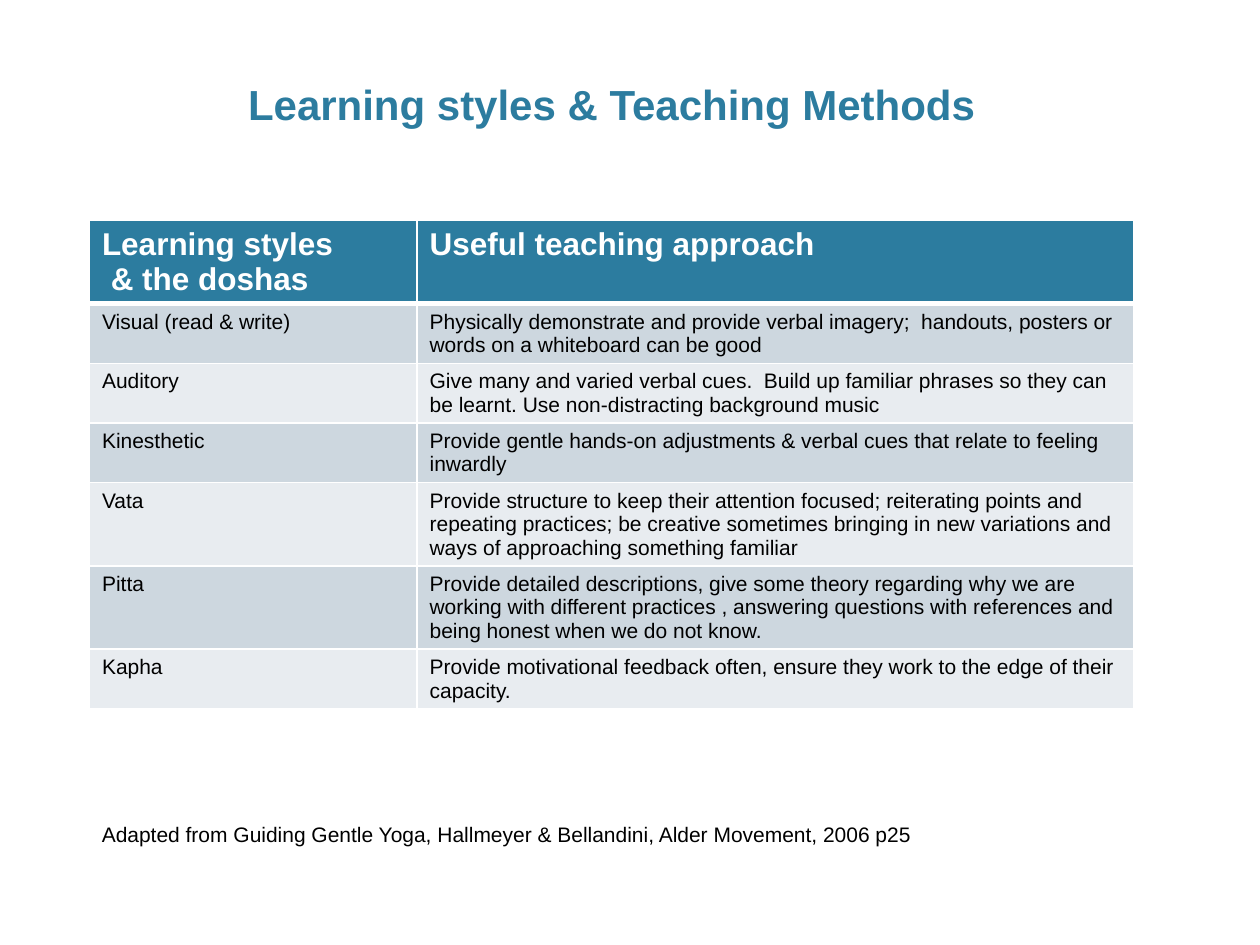
from lxml import etree
from pptx import Presentation
from pptx.dml.color import RGBColor
from pptx.enum import text
from pptx.oxml.ns import qn
from pptx.util import Inches, Pt

TEAL, WHITE, BLACK = "2C7C9F", "FFFFFF", "000000"
BANDS = ["CDD7DF", "E8ECF0"]


def write(frame, content, size=12, color=BLACK, bold=False, align=None):
    """Fill a text frame, one paragraph per line of content."""
    frame.word_wrap = True
    frame.text = content
    for paragraph in frame.paragraphs:
        paragraph.alignment = align
        font = paragraph.runs[0].font
        font.name, font.size, font.bold = "Arial", Pt(size), bold
        font.color.rgb = RGBColor.from_string(color)


def paint(cell, fill, bottom=1):
    """Give a cell white borders and a solid fill."""
    props = cell._tc.get_or_add_tcPr()
    for side, width in [("L", 1), ("R", 1), ("T", 1), ("B", bottom)]:
        line = etree.SubElement(props, qn(f"a:ln{side}"), w=str(Pt(width)))
        solid = etree.SubElement(line, qn("a:solidFill"))
        etree.SubElement(solid, qn("a:srgbClr"), val=WHITE)
    cell.fill.solid()
    cell.fill.fore_color.rgb = RGBColor.from_string(fill)


prs = Presentation()
prs.slide_width, prs.slide_height = Inches(10), Inches(7.5)
slide = prs.slides.add_slide(prs.slide_layouts[5])
left, width = Inches(0.71), Inches(8.29)

# Title
title = slide.shapes.title
title.left, title.top, title.width, title.height = left, Inches(0.25), width, Inches(0.82)
title.text_frame.vertical_anchor = text.MSO_ANCHOR.BOTTOM
write(title.text_frame, "Learning styles & Teaching Methods", size=24, color=TEAL,
      bold=True, align=text.PP_ALIGN.CENTER)

# Table of styles and approaches
approaches = [
    ("Learning styles\n & the doshas", "Useful teaching approach"),
    ("Visual (read & write)",
     "Physically demonstrate and provide verbal imagery;  handouts, posters or "
     "words on a whiteboard can be good"),
    ("Auditory",
     "Give many and varied verbal cues.  Build up familiar phrases so they can "
     "be learnt. Use non-distracting background music"),
    ("Kinesthetic",
     "Provide gentle hands-on adjustments & verbal cues that relate to feeling inwardly"),
    ("Vata",
     "Provide structure to keep their attention focused; reiterating points and "
     "repeating practices; be creative sometimes bringing in new variations and "
     "ways of approaching something familiar"),
    ("Pitta",
     "Provide detailed descriptions, give some theory regarding why we are "
     "working with different practices , answering questions with references and "
     "being honest when we do not know."),
    ("Kapha",
     "Provide motivational feedback often, ensure they work to the edge of their capacity."),
]
row_height = Inches(0.41)
table = slide.shapes.add_table(len(approaches), 2, left, Inches(1.75), width,
                               row_height * len(approaches)).table
table.columns[0].width = Inches(2.6)
table.columns[1].width = Inches(5.69)
for r, row in enumerate(approaches):
    for c, content in enumerate(row):
        cell = table.cell(r, c)
        if r == 0:
            write(cell.text_frame, content, size=18, color=WHITE, bold=True)
            paint(cell, TEAL, bottom=3)
        else:
            write(cell.text_frame, content)
            paint(cell, BANDS[(r - 1) % 2])

# Citation
citation = slide.shapes.add_textbox(left, Inches(6.47), Inches(8.44), Inches(0.3))
write(citation.text_frame,
      "Adapted from Guiding Gentle Yoga, Hallmeyer & Bellandini, Alder Movement, 2006 p25")

prs.save("out.pptx")
